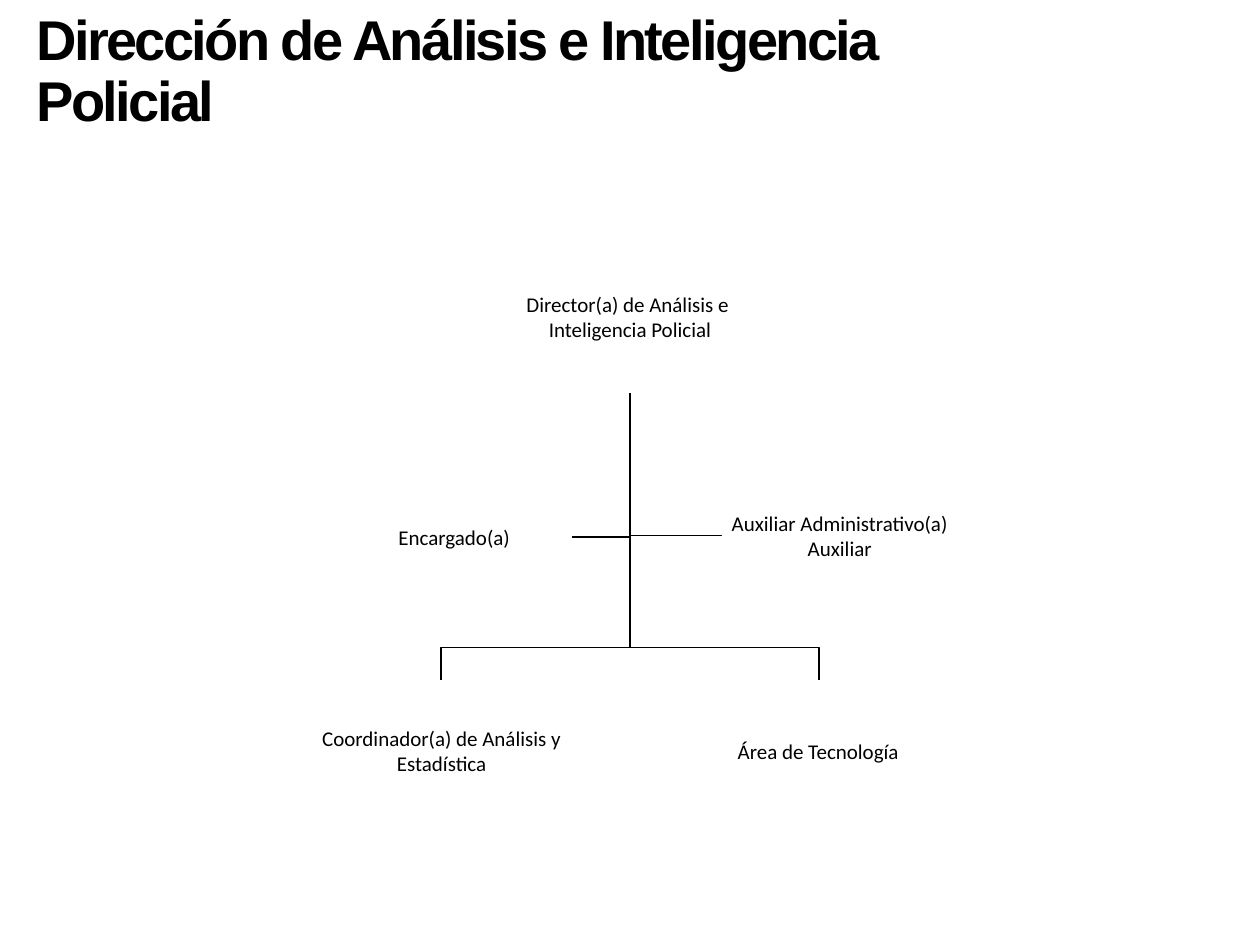
"""Builds the organisation chart of the Dirección de Análisis e Inteligencia Policial."""
from dataclasses import dataclass

from pptx import Presentation
from pptx import util as u
from pptx.dml.color import RGBColor
from pptx.enum import shapes, text


@dataclass(frozen=True)
class Theme:
    ink: RGBColor = RGBColor(0, 0, 0)
    paper: RGBColor = RGBColor(255, 255, 255)
    title_font: str = "Arial"
    body_font: str = "Calibri"
    title_size: int = 32
    body_size: int = 12
    line_width: int = 1
    inset: float = 0.01


class ChartSlide:
    def __init__(self, page, theme):
        self.page = page
        self.theme = theme

    def add_span(self, para, words, font, size, bold=False):
        span = para.add_run()
        span.text = words
        span.font.name = font
        span.font.size = u.Pt(size)
        span.font.bold = bold
        span.font.color.rgb = self.theme.ink
        return span

    def title(self, words, left, top, width, height):
        box = self.page.shapes.add_textbox(*map(u.Inches, (left, top, width, height)))
        box.text_frame.word_wrap = True
        para = box.text_frame.paragraphs[0]
        para.line_spacing = 0.9
        span = self.add_span(para, words, self.theme.title_font, self.theme.title_size, True)
        span.font._element.set("spc", "-150")

    def branch(self, *points):
        start, *rest = [(u.Inches(x), u.Inches(y)) for x, y in points]
        builder = self.page.shapes.build_freeform(*start)
        builder.add_line_segments(rest, close=False)
        line = builder.convert_to_shape()
        line.shadow.inherit = False
        line.fill.background()
        line.line.color.rgb = self.theme.ink
        line.line.width = u.Pt(self.theme.line_width)

    def post(self, paragraphs, left, top, width, height):
        box = self.page.shapes.add_shape(
            shapes.MSO_SHAPE.RECTANGLE, *map(u.Inches, (left, top, width, height)))
        box.shadow.inherit = False
        box.fill.solid()
        box.fill.fore_color.rgb = self.theme.paper
        box.line.fill.background()
        frame = box.text_frame
        frame.word_wrap = True
        frame.vertical_anchor = text.MSO_ANCHOR.MIDDLE
        inset = u.Inches(self.theme.inset)
        frame.margin_left = frame.margin_right = inset
        frame.margin_top = frame.margin_bottom = inset
        for index, lines in enumerate(paragraphs):
            para = frame.add_paragraph() if index else frame.paragraphs[0]
            para.alignment = text.PP_ALIGN.CENTER
            for number, words in enumerate(lines):
                if number:
                    para.add_line_break()
                self.add_span(para, words, self.theme.body_font, self.theme.body_size)


def main():
    deck = Presentation()
    deck.slide_width, deck.slide_height = u.Inches(10), u.Inches(7.5)
    chart = ChartSlide(deck.slides.add_slide(deck.slide_layouts[6]), Theme())

    trunk, head_bottom, fork, area_top = 5, 3.12, 5.14, 5.4
    chart.post([["Director(a) de Análisis e ", "Inteligencia Policial"]], 3.64, 1.89, 2.72, 1.24)
    for end, level in ((5.73, 4.25), (4.54, 4.26)):
        chart.branch((trunk, head_bottom), (trunk, level), (end, level))
    for end in (6.5, 3.5):
        chart.branch((trunk, head_bottom), (trunk, fork), (end, fork), (end, area_top))

    chart.post([["Coordinador(a) de Análisis y Estadística"]], 2.27, area_top, 2.47, 1.12)
    chart.post([["Área de Tecnología"]], 5.26, area_top, 2.47, 1.12)
    chart.post([["Encargado(a)"]], 2.67, 3.75, 1.87, 1.02)
    chart.post([["Auxiliar Administrativo(a)"], ["Auxiliar"]], 5.73, 3.74, 1.87, 1.02)
    chart.title("Dirección de Análisis e Inteligencia Policial", 0.19, 0.05, 7.46, 1.07)
    deck.save("out.pptx")


if __name__ == "__main__":
    main()
